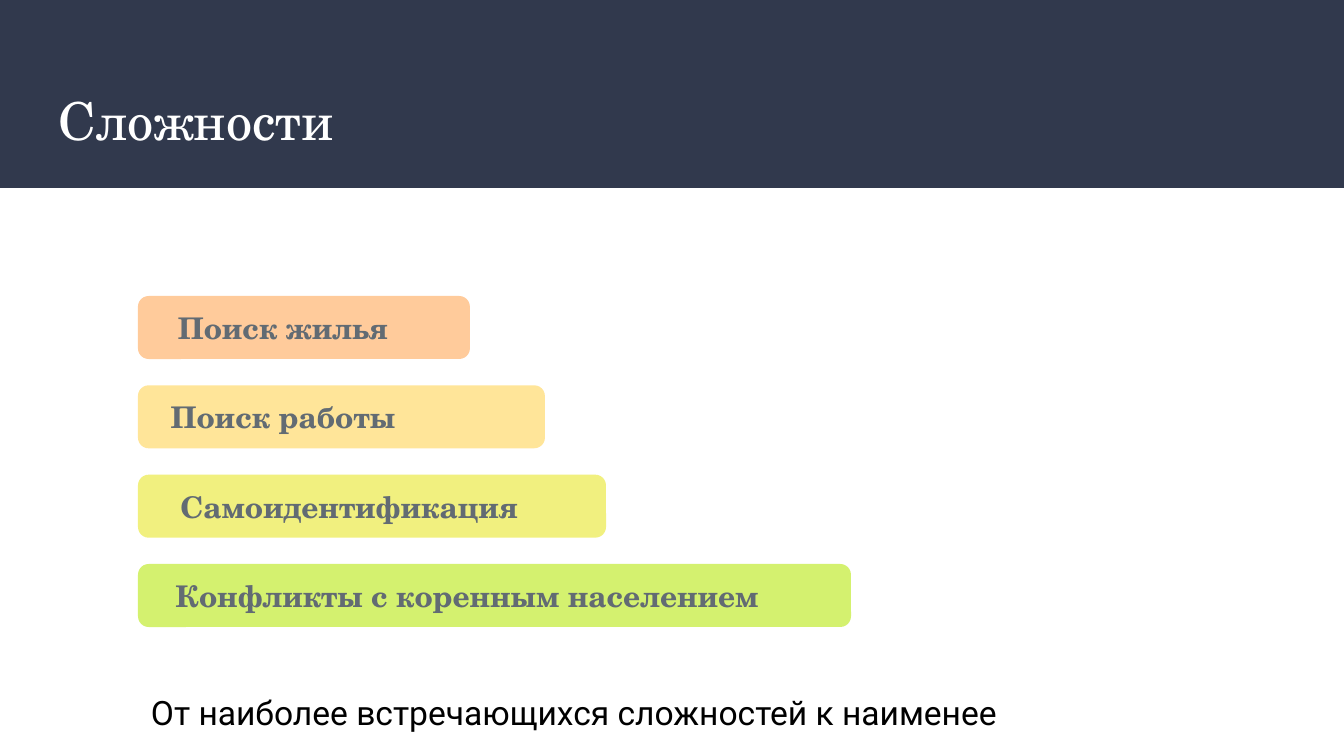
from dataclasses import dataclass

from lxml import etree
from pptx import Presentation
from pptx.dml.color import RGBColor
from pptx.enum.shapes import MSO_SHAPE
from pptx.enum.text import MSO_ANCHOR, PP_ALIGN
from pptx.oxml.ns import qn
from pptx.util import Emu, Pt

RECT, ROUNDED = MSO_SHAPE.RECTANGLE, MSO_SHAPE.ROUNDED_RECTANGLE
TOP, MIDDLE = MSO_ANCHOR.TOP, MSO_ANCHOR.MIDDLE
LEFT, CENTER = PP_ALIGN.LEFT, PP_ALIGN.CENTER
EMU_PER_PX = 9144000 / 1344


@dataclass(frozen=True)
class Theme:
    header: str = "31394D"
    title: str = "FFFFFF"
    label: str = "626B73"
    body: str = "000000"
    serif: str = "TeX Gyre Schola"
    sans: str = "Roboto"
    title_size: int = 28
    label_size: int = 16
    body_size: int = 18
    bars: tuple = (("FFCB9B", 100), ("FFE599", 100), ("EAE83B", 65), ("BDEA22", 65))


THEME = Theme()
DIFFICULTIES = (
    ("Поиск жилья", 332, 290),
    ("Поиск работы", 407, 290),
    ("Самоидентификация", 468, 423),
    ("Конфликты с коренным населением", 713, 659),
)


def px(n):
    return Emu(round(n * EMU_PER_PX))


def add_box(s, kind, x, y, w, h, color, opacity=100):
    sp = s.shapes.add_shape(kind, px(x), px(y), px(w), px(h))
    sp.shadow.inherit = False
    sp.fill.solid()
    sp.fill.fore_color.rgb = RGBColor.from_string(color)
    sp.line.fill.background()
    if opacity < 100:
        clr = sp.fill._xPr.find(qn("a:solidFill"))[0]
        etree.SubElement(clr, qn("a:alpha")).set("val", str(opacity * 1000))
    return sp


def add_text(s, text, x, y, w, h, *, font, size, color,
             bold=False, align=LEFT, anchor=MIDDLE):
    sp = s.shapes.add_textbox(px(x), px(y), px(w), px(h))
    tf = sp.text_frame
    tf.word_wrap = True
    tf.vertical_anchor = anchor
    tf.margin_left = tf.margin_right = tf.margin_top = tf.margin_bottom = px(13)
    p = tf.paragraphs[0]
    p.alignment = align
    r = p.add_run()
    r.text = text
    r.font.name = font
    r.font.size = Pt(size)
    r.font.bold = bold
    r.font.color.rgb = RGBColor.from_string(color)


def add_header(s, x, y, w, h):
    add_box(s, RECT, x, y, w, h, THEME.header)
    add_text(s, "Сложности", x + 46, y + 74, w - 92, 91, font=THEME.serif,
             size=THEME.title_size, color=THEME.title)


def add_bars(s, x, y, h):
    bar_h = 63
    pitch = (h - bar_h) / (len(DIFFICULTIES) - 1)
    for i, (text, bar_w, label_w) in enumerate(DIFFICULTIES):
        top = y + i * pitch
        color, opacity = THEME.bars[i]
        bar = add_box(s, ROUNDED, x, top, bar_w, bar_h, color, opacity)
        bar.adjustments[0] = 0.17
        add_text(s, text, x, top, label_w, bar_h, font=THEME.serif,
                 size=THEME.label_size, color=THEME.label, bold=True, align=CENTER)


def add_caption(s, x, y, w, h):
    add_text(s, "От наиболее встречающихся сложностей к наименее", x, y, w, h,
             font=THEME.sans, size=THEME.body_size, color=THEME.body, anchor=TOP)


def main():
    prs = Presentation()
    prs.slide_width, prs.slide_height = px(1344), px(756)
    s = prs.slides.add_slide(prs.slide_layouts[6])
    add_header(s, 0, 0, 1344, 188)
    add_bars(s, 138, 296, 331)
    add_caption(s, 138, 679, 1097, 52)
    prs.save("out.pptx")


if __name__ == "__main__":
    main()
